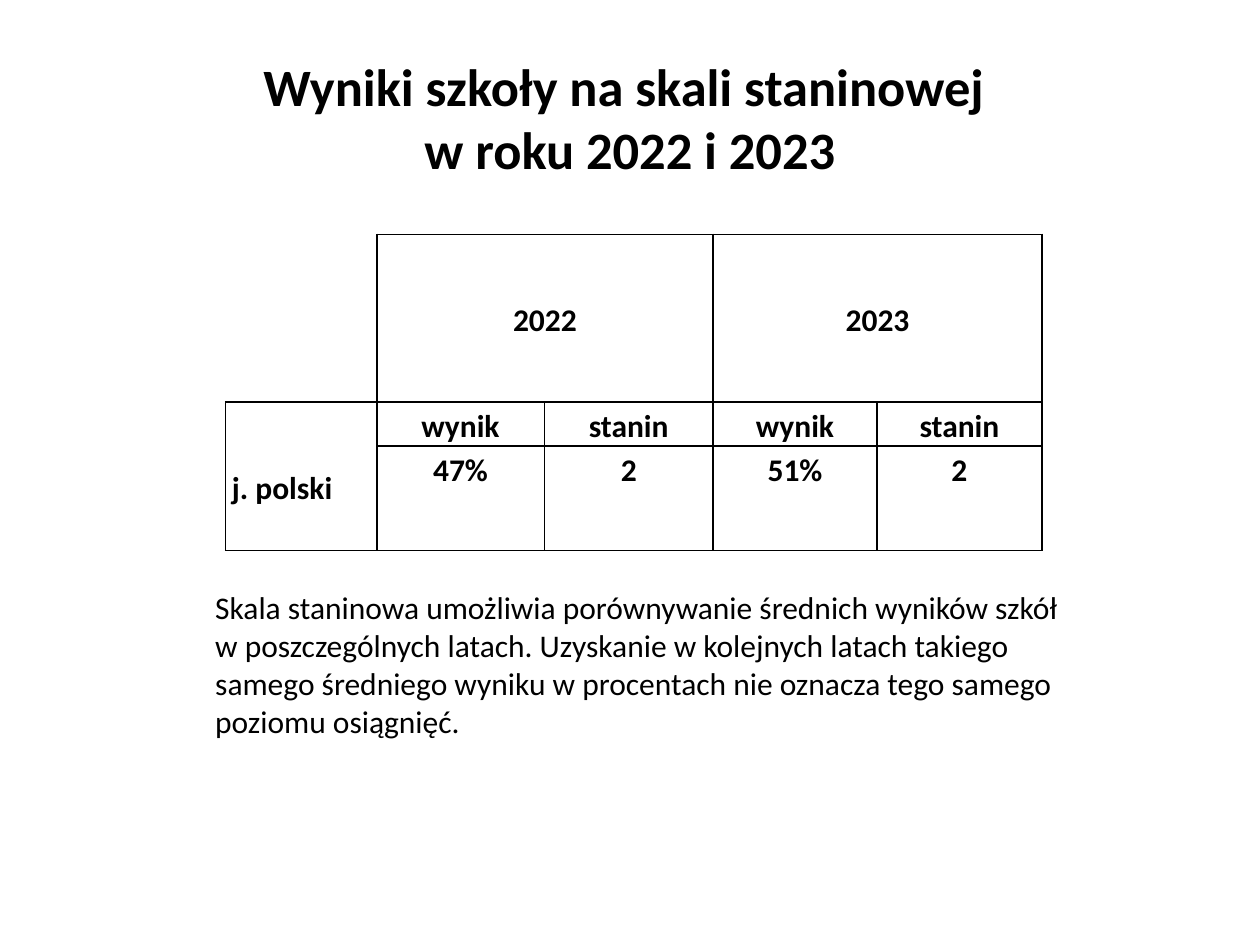
import pptx
import pptx.util
import pptx.dml.color
import pptx.enum.text
import pptx.oxml
import pptx.oxml.ns

Inches = pptx.util.Inches
Pt = pptx.util.Pt
ALIGN = pptx.enum.text.PP_ALIGN
ANCHOR = pptx.enum.text.MSO_ANCHOR
BLACK = pptx.dml.color.RGBColor(0, 0, 0)


def style(para, size, bold, align):
    para.alignment = align
    para.font.name = "Calibri"
    para.font.size = Pt(size)
    para.font.bold = bold
    para.font.color.rgb = BLACK


def border(cell, sides):
    props = cell._tc.get_or_add_tcPr()
    for side in "LRTB":
        paint = "<a:noFill/>"
        if side in sides:
            paint = f'<a:solidFill><a:srgbClr val="{BLACK}"/></a:solidFill>'
        props.append(pptx.oxml.parse_xml(
            f'<a:ln{side} {pptx.oxml.ns.nsdecls("a")} w="{Pt(1)}">{paint}</a:ln{side}>'))


deck = pptx.Presentation()
deck.slide_width = Inches(10)
deck.slide_height = Inches(7.5)
slide = deck.slides.add_slide(deck.slide_layouts[5])

title = slide.shapes.title
title.left, title.top = Inches(0.5), Inches(0.3)
title.width, title.height = Inches(9), Inches(1.25)
title.text_frame.text = "Wyniki szkoły na skali staninowej \vw roku 2022 i 2023"
title.text_frame.vertical_anchor = ANCHOR.MIDDLE
style(title.text_frame.paragraphs[0], 30, True, ALIGN.CENTER)

rows = [
    ["", "2022", "", "2023", ""],
    ["j. polski", "wynik", "stanin", "wynik", "stanin"],
    ["", "47%", "2", "51%", "2"],
]
widths = [1.2, 1.33, 1.34, 1.3, 1.31]
heights = [1.33, 0.35, 0.83]
table = slide.shapes.add_table(
    len(rows), len(widths), Inches(1.79), Inches(1.86),
    Inches(sum(widths)), Inches(sum(heights))).table
table.first_row = False
table.horz_banding = False
for col, width in zip(table.columns, widths):
    col.width = Inches(width)
for row, height in zip(table.rows, heights):
    row.height = Inches(height)

for r, texts in enumerate(rows):
    for c, text in enumerate(texts):
        cell = table.cell(r, c)
        cell.margin_left = cell.margin_right = Inches(0.05)
        cell.margin_top = cell.margin_bottom = 0
        border(cell, "RB" if r == c == 0 else "LRTB")
        cell.fill.background()
        cell.text = text
        para = cell.text_frame.paragraphs[0]
        style(para, 18, True, ALIGN.CENTER if c else ALIGN.LEFT)
        para.line_spacing = 1.15
        if r == 0 or c == 0:
            cell.vertical_anchor = ANCHOR.MIDDLE

table.cell(0, 1).merge(table.cell(0, 2))
table.cell(0, 3).merge(table.cell(0, 4))
table.cell(1, 0).merge(table.cell(2, 0))
table.cell(1, 0).margin_top = Inches(0.15)

note = slide.shapes.add_textbox(Inches(1.61), Inches(4.62), Inches(7), Inches(1.31))
frame = note.text_frame
frame.word_wrap = True
frame.auto_size = pptx.enum.text.MSO_AUTO_SIZE.SHAPE_TO_FIT_TEXT
frame.text = (
    "Skala staninowa umożliwia porównywanie średnich wyników szkół "
    "w poszczególnych latach. Uzyskanie w kolejnych latach takiego "
    "samego średniego wyniku w procentach nie oznacza tego samego "
    "poziomu osiągnięć.")
style(frame.paragraphs[0], 18, False, ALIGN.LEFT)

deck.save("out.pptx")
